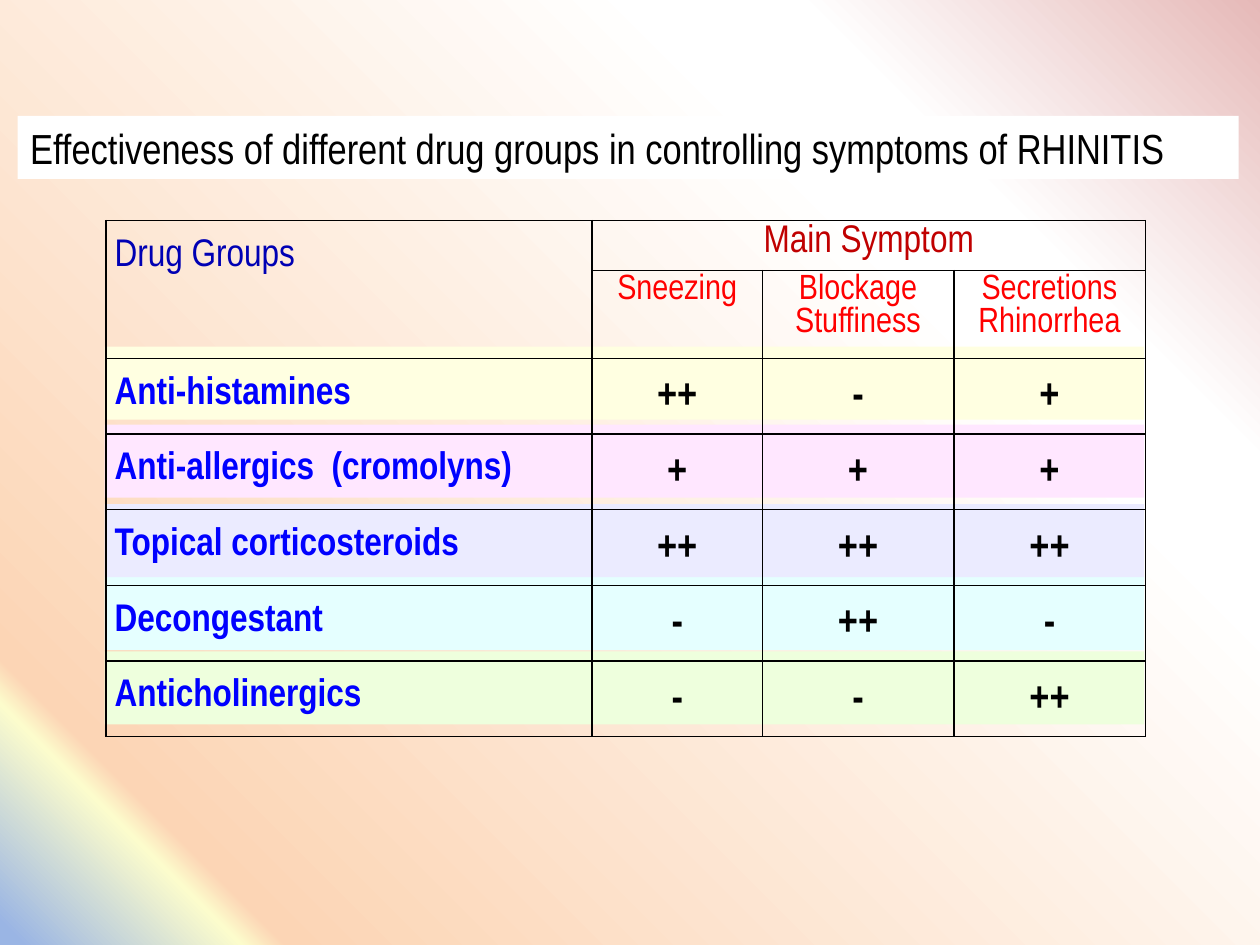
from dataclasses import dataclass

from lxml import etree
from pptx import Presentation
from pptx.dml.color import RGBColor
from pptx.enum.shapes import MSO_SHAPE
from pptx.enum.text import MSO_AUTO_SIZE, PP_ALIGN
from pptx.oxml.ns import qn
from pptx.util import Inches, Pt

RECTANGLE = MSO_SHAPE.RECTANGLE
GROW = MSO_AUTO_SIZE.SHAPE_TO_FIT_TEXT
LEFT, CENTER, JUSTIFY = PP_ALIGN.LEFT, PP_ALIGN.CENTER, PP_ALIGN.JUSTIFY

FONT = "Arial Narrow"
BLACK, WHITE = "000000", "FFFFFF"
BACKGROUND_STOPS = [
    (1, "9AB5E4"), (11, "FCFCCC"), (13, "FCD5B5"),
    (72, "FFFFFF"), (79, "FFFFFF"), (100, "E6B9B8"),
]
COLUMN_WIDTHS = [3.86, 1.35, 1.52, 1.52]
HEADER_HEIGHTS = [0.37, 0.67]
DRUG_ROW_HEIGHT = 0.6
BAND_LEFT, BAND_WIDTH, BAND_HEIGHT = 0.83, 8.25, 0.58


@dataclass(frozen=True)
class TextStyle:
    size: int
    color: str
    bold: bool = False
    align: PP_ALIGN = CENTER
    spacing: float = 1.5
    cell_top: float = 0


@dataclass(frozen=True)
class DrugGroup:
    name: str
    ratings: tuple
    band_top: float
    band_color: str


TITLE = TextStyle(24, BLACK, align=LEFT, spacing=1.0)
CORNER = TextStyle(22, "0000B4", align=JUSTIFY)
MAIN_HEADER = TextStyle(22, "C00000", spacing=1.0, cell_top=0.03)
SYMPTOM = TextStyle(20, "FF0000", spacing=1.0, cell_top=0.03)
DRUG_NAME = TextStyle(22, "0000FF", bold=True, align=JUSTIFY)
RATING = TextStyle(24, BLACK, bold=True)

SYMPTOMS = ["Sneezing", "Blockage\nStuffiness", "Secretions\nRhinorrhea"]
DRUG_GROUPS = [
    DrugGroup("Anti-histamines", ("++", "-", "+"), 2.75, "FFFFE1"),
    DrugGroup("Anti-allergics  (cromolyns)", ("+", "+", "+"), 3.37, "FFE7FF"),
    DrugGroup("Topical corticosteroids", ("++", "++", "++"), 4.0, "EBEBFF"),
    DrugGroup("Decongestant", ("-", "++", "-"), 4.58, "E5FFFF"),
    DrugGroup("Anticholinergics", ("-", "-", "++"), 5.17, "EEFFDD"),
]


def rgb(value: str) -> RGBColor:
    return RGBColor.from_string(value)


def paint_background(slide) -> None:
    """Fill the slide with a gradient rising from bottom left to top right."""
    fill = slide.background.fill
    fill.gradient()
    fill.gradient_angle = 45
    stops = slide.element.find(".//" + qn("a:gsLst"))
    for stop in list(stops):
        stops.remove(stop)
    for percent, color in BACKGROUND_STOPS:
        stop = etree.SubElement(stops, qn("a:gs"), pos=str(percent * 1000))
        etree.SubElement(stop, qn("a:srgbClr"), val=color)


def write_text(text_frame, text: str, style: TextStyle) -> None:
    text_frame.text = text
    font_values = {"name": FONT, "size": Pt(style.size), "bold": style.bold}
    for paragraph in text_frame.paragraphs:
        paragraph.alignment = style.align
        paragraph.line_spacing = style.spacing
        for run in paragraph.runs:
            for attribute, value in font_values.items():
                setattr(run.font, attribute, value)
            run.font.color.rgb = rgb(style.color)


def write_cell(cell, text: str, style: TextStyle) -> None:
    cell.margin_top = Inches(style.cell_top)
    write_text(cell.text_frame, text, style)


def add_band(slide, group: DrugGroup) -> None:
    shape = slide.shapes.add_shape(
        RECTANGLE, Inches(BAND_LEFT), Inches(group.band_top),
        Inches(BAND_WIDTH), Inches(BAND_HEIGHT),
    )
    shape.shadow.inherit = False
    shape.fill.solid()
    shape.fill.fore_color.rgb = rgb(group.band_color)
    shape.line.fill.background()


def add_title(slide, text: str) -> None:
    shape = slide.shapes.add_textbox(
        Inches(0.14), Inches(0.92), Inches(9.69), Inches(0.5)
    )
    shape.fill.solid()
    shape.fill.fore_color.rgb = rgb(WHITE)
    shape.text_frame.word_wrap = True
    shape.text_frame.auto_size = GROW
    write_text(shape.text_frame, text, TITLE)


def format_cell(cell) -> None:
    """Give a cell thin black borders, tight margins and no fill."""
    margins = {
        "margin_left": Inches(0.07), "margin_right": Inches(0.07),
        "margin_top": 0, "margin_bottom": 0,
    }
    for attribute, value in margins.items():
        setattr(cell, attribute, value)
    properties = cell._tc.get_or_add_tcPr()
    for side in ("lnL", "lnR", "lnT", "lnB"):
        line = etree.SubElement(properties, qn(f"a:{side}"), w=str(Pt(1)))
        fill = etree.SubElement(line, qn("a:solidFill"))
        etree.SubElement(fill, qn("a:srgbClr"), val=BLACK)
    cell.fill.background()


def add_effectiveness_table(slide) -> None:
    heights = HEADER_HEIGHTS + [DRUG_ROW_HEIGHT] * len(DRUG_GROUPS)
    table = slide.shapes.add_table(
        len(heights), len(COLUMN_WIDTHS), Inches(0.84), Inches(1.75),
        Inches(sum(COLUMN_WIDTHS)), Inches(sum(heights)),
    ).table
    table.first_row = False
    table.horz_banding = False
    for column, width in zip(table.columns, COLUMN_WIDTHS):
        column.width = Inches(width)
    for row, height in zip(table.rows, heights):
        row.height = Inches(height)
    for cell in table.iter_cells():
        format_cell(cell)

    table.cell(0, 0).merge(table.cell(1, 0))
    table.cell(0, 1).merge(table.cell(0, 3))
    write_cell(table.cell(0, 0), "Drug Groups", CORNER)
    write_cell(table.cell(0, 1), "Main Symptom", MAIN_HEADER)
    for column, symptom in enumerate(SYMPTOMS, start=1):
        write_cell(table.cell(1, column), symptom, SYMPTOM)
    for row, group in enumerate(DRUG_GROUPS, start=len(HEADER_HEIGHTS)):
        write_cell(table.cell(row, 0), group.name, DRUG_NAME)
        for column, rating in enumerate(group.ratings, start=1):
            write_cell(table.cell(row, column), rating, RATING)


def main() -> None:
    presentation = Presentation()
    presentation.slide_width = Inches(10)
    presentation.slide_height = Inches(7.5)
    slide = presentation.slides.add_slide(presentation.slide_layouts[6])
    paint_background(slide)
    for group in reversed(DRUG_GROUPS):
        add_band(slide, group)
    add_title(
        slide,
        "Effectiveness of different drug groups in controlling symptoms of RHINITIS",
    )
    add_effectiveness_table(slide)
    presentation.save("out.pptx")


if __name__ == "__main__":
    main()
